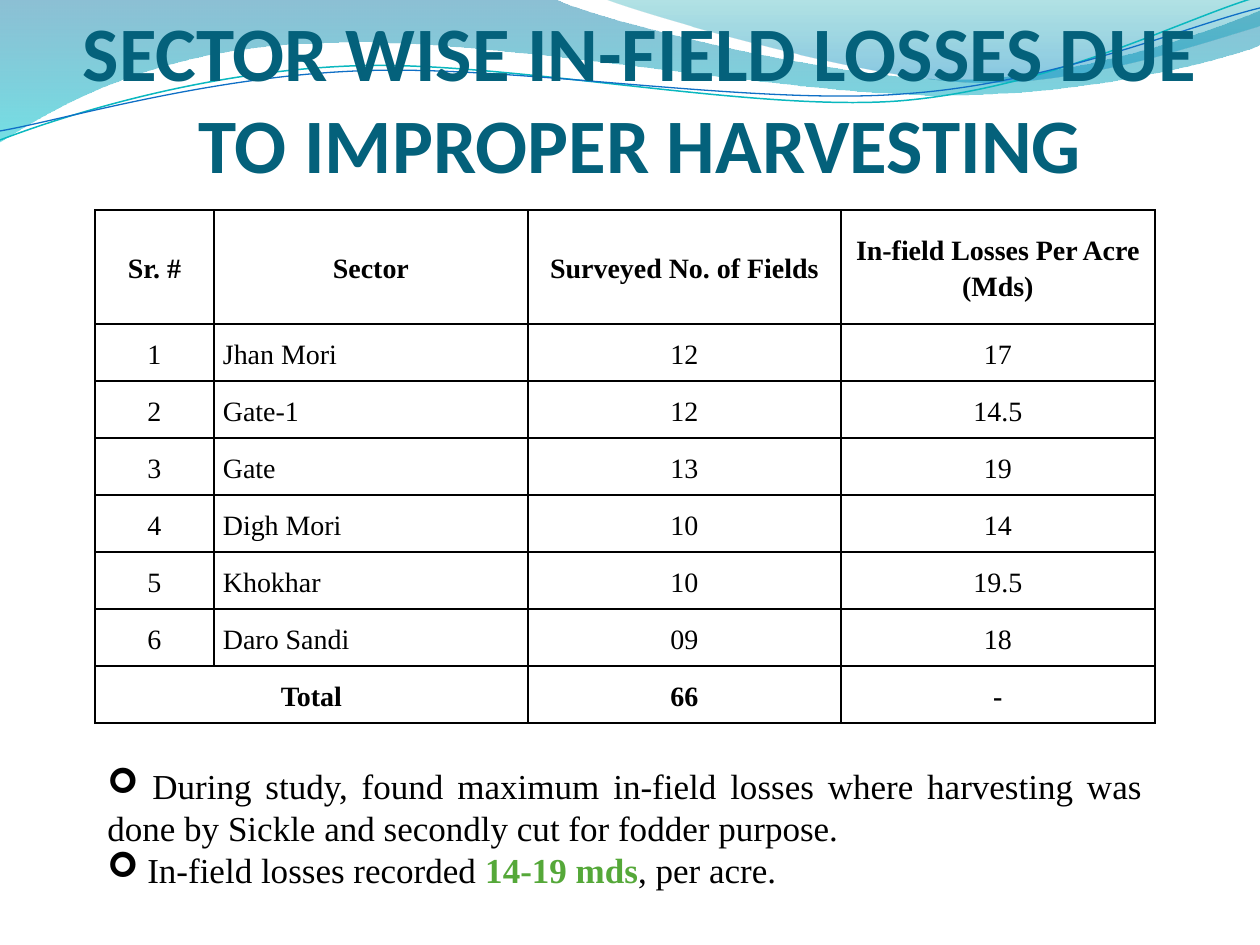
"""Build a slide with a table of in-field harvesting losses by sector."""
from dataclasses import dataclass
from typing import NamedTuple

from lxml.etree import SubElement
from pptx import Presentation
from pptx.dml.color import RGBColor
from pptx.enum.text import MSO_ANCHOR, MSO_AUTO_SIZE, PP_ALIGN
from pptx.oxml.ns import qn
from pptx.util import Pt

PX = 914400 / 126


@dataclass(frozen=True)
class Theme:
    title_font: str = "Calibri"
    body_font: str = "Times New Roman"
    bullet_font: str = "Wingdings"
    title_size: int = 44
    table_size: int = 16
    body_size: int = 20
    title: str = "04617B"
    text: str = "000000"
    highlight: str = "55A839"


class Stop(NamedTuple):
    position: float
    color: str
    alpha: int


class Wave(NamedTuple):
    start: tuple[int, int]
    segments: list[tuple[int, ...]]
    stops: tuple[Stop, Stop]


class Strand(NamedTuple):
    start: tuple[int, int]
    segments: list[tuple[int, ...]]
    color: str
    width: float


class Span(NamedTuple):
    text: str
    highlighted: bool = False


class Bullet(NamedTuple):
    spans: list[Span]
    align: PP_ALIGN


THEME = Theme()

WAVES = [
    Wave((0, 0), [(554, -1), (600, 21, 837, 79, 955, 79),
                  (1074, 79, 1207, 33, 1260, 11), (1261, 45),
                  (1239, 55, 1096, 96, 940, 95), (784, 95, 481, 35, 324, 43),
                  (163, 45, 58, 105, -1, 142), (0, 0)],
         (Stop(0, "0074A1", 45), Stop(1, "00C6CF", 55))),
    Wave((604, -1), [(641, 14, 859, 78, 969, 82),
                     (1079, 87, 1211, 40, 1260, 26), (1260, 0), (604, -1)],
         (Stop(0, "00A1A9", 30), Stop(0.8, "008BBF", 45))),
]
STRANDS = [
    Strand((0, 140), [(60, 117, 199, 72, 349, 66), (498, 59, 747, 112, 898, 101),
                      (1050, 89, 1182, 19, 1257, -3)], "0AB8BF", 0.85),
    Strand((0, 131), [(59, 121, 207, 77, 357, 71), (508, 64, 752, 106, 903, 94),
                      (1053, 84, 1186, 26, 1260, 8)], "0F6FC6", 0.75),
]

COLUMNS = [119, 314, 313, 314]
ROW_HEIGHT = 57
HEADER_HEIGHT = 114
ROWS = [
    ("Sr. #", "Sector", "Surveyed No. of Fields", "In-field Losses Per Acre (Mds)"),
    ("1", "Jhan Mori", "12", "17"),
    ("2", "Gate-1", "12", "14.5"),
    ("3", "Gate", "13", "19"),
    ("4", "Digh Mori", "10", "14"),
    ("5", "Khokhar", "10", "19.5"),
    ("6", "Daro Sandi", "09", "18"),
    ("Total", "", "66", "-"),
]
BULLETS = [
    Bullet([Span(" During study, found maximum in-field losses where harvesting was "
                 "done by Sickle and secondly cut for fodder purpose.")], PP_ALIGN.JUSTIFY),
    Bullet([Span(" In-field losses recorded "), Span("14-19 mds", True),
            Span(", per acre.")], PP_ALIGN.LEFT),
]


def px(length: int) -> int:
    """Turn px into EMU."""
    return round(length * PX)


def style_font(font, name: str, size: int, color: str, bold: bool = False) -> None:
    """Set the typeface, size, colour and weight of a font."""
    font.name, font.size, font.bold = name, Pt(size), bold
    font.color.rgb = RGBColor.from_string(color)


def add_outline(s, item: Wave | Strand, close: bool):
    """Add a shadowless freeform whose six-number segments are cubic curves."""
    points = [pair for seg in item.segments for pair in zip(seg[::2], seg[1::2])]
    builder = s.shapes.build_freeform(*item.start, scale=PX)
    builder.add_line_segments(points, close=close)
    sp = builder.convert_to_shape()
    sp.shadow.inherit = False
    lines = iter(list(sp.element.iter(qn("a:lnTo"))))
    for segment in item.segments:
        parts = [next(lines) for _ in segment[::2]]
        if len(parts) == 3:
            curve = parts[0].makeelement(qn("a:cubicBezTo"))
            parts[0].addprevious(curve)
            for part in parts:
                curve.append(part[0])
                part.getparent().remove(part)
    return sp


def add_wave(s, wave: Wave) -> None:
    """Add a translucent wave with a vertical gradient."""
    sp = add_outline(s, wave, True)
    sp.fill.gradient()
    sp.fill.gradient_angle = 270
    for target, stop in zip(sp.fill.gradient_stops, wave.stops):
        target.position = stop.position
        target.color.rgb = RGBColor.from_string(stop.color)
    for color, stop in zip(sp.element.spPr.iter(qn("a:srgbClr")), wave.stops):
        SubElement(color, qn("a:alpha"), val=str(stop.alpha * 1000))
    sp.line.fill.background()


def add_strand(s, strand: Strand) -> None:
    """Add a thin curved line."""
    sp = add_outline(s, strand, False)
    sp.fill.background()
    sp.line.color.rgb = RGBColor.from_string(strand.color)
    sp.line.width = Pt(strand.width)


def set_title(s, text: str) -> None:
    """Place the title in front of the waves and format it."""
    sp = s.shapes.title
    sp.element.getparent().append(sp.element)
    sp.left, sp.top, sp.width, sp.height = px(42), px(73), px(1197), px(116)
    tf = sp.text_frame
    tf.text = text
    tf.word_wrap, tf.auto_size = True, MSO_AUTO_SIZE.NONE
    tf.vertical_anchor = MSO_ANCHOR.BOTTOM
    tf.margin_left = tf.margin_right = tf.margin_bottom = 0
    tf.margin_top = px(6)
    p = tf.paragraphs[0]
    p.alignment = PP_ALIGN.CENTER
    style_font(p.font, THEME.title_font, THEME.title_size, THEME.title, True)


def format_cell(cell, text: str, align: PP_ALIGN, bold: bool) -> None:
    """Give a cell its borders, margins and text."""
    tc_pr = cell._tc.get_or_add_tcPr()
    for side in ("lnL", "lnR", "lnT", "lnB"):
        ln = SubElement(tc_pr, qn(f"a:{side}"), w=str(Pt(1)))
        SubElement(SubElement(ln, qn("a:solidFill")), qn("a:srgbClr"), val=THEME.text)
    cell.fill.background()
    cell.margin_left = cell.margin_right = px(9)
    cell.margin_top = cell.margin_bottom = 0
    cell.vertical_anchor = MSO_ANCHOR.MIDDLE
    p = cell.text_frame.paragraphs[0]
    p.text, p.alignment = text, align
    p.line_spacing, p.space_after = 1.15, Pt(10)
    style_font(p.font, THEME.body_font, THEME.table_size, THEME.text, bold)


def add_losses_table(s) -> None:
    """Add the table of losses with a merged total label."""
    heights = [HEADER_HEIGHT] + [ROW_HEIGHT] * (len(ROWS) - 1)
    table = s.shapes.add_table(len(ROWS), len(COLUMNS), px(95), px(210),
                               px(sum(COLUMNS)), px(sum(heights))).table
    table.first_row = table.horz_banding = False
    for column, width in zip(table.columns, COLUMNS):
        column.width = px(width)
    last = len(ROWS) - 1
    for i, (row, height) in enumerate(zip(ROWS, heights)):
        table.rows[i].height = px(height)
        bold = i in (0, last)
        for j, text in enumerate(row):
            align = PP_ALIGN.LEFT if j == 1 and not bold else PP_ALIGN.CENTER
            format_cell(table.cell(i, j), text, align, bold)
    table.cell(last, 0).merge(table.cell(last, 1))


def add_findings(s) -> None:
    """Add the bulleted findings below the table."""
    tf = s.shapes.add_textbox(px(95), px(758), px(1060), px(140)).text_frame
    tf.word_wrap, tf.auto_size = True, MSO_AUTO_SIZE.SHAPE_TO_FIT_TEXT
    for i, bullet in enumerate(BULLETS):
        p = tf.add_paragraph() if i else tf.paragraphs[0]
        p.alignment = bullet.align
        p_pr = p._p.get_or_add_pPr()
        SubElement(p_pr, qn("a:buFont"), typeface=THEME.bullet_font)
        SubElement(p_pr, qn("a:buChar"), char="➢")
        style_font(p.font, THEME.body_font, THEME.body_size, THEME.text)
        for span in bullet.spans:
            r = p.add_run()
            r.text = span.text
            if span.highlighted:
                r.font.bold = True
                r.font.color.rgb = RGBColor.from_string(THEME.highlight)


def main() -> None:
    """Build and save the presentation."""
    prs = Presentation()
    prs.slide_width, prs.slide_height = px(1260), px(945)
    s = prs.slides.add_slide(prs.slide_layouts[5])
    for wave in WAVES:
        add_wave(s, wave)
    for strand in STRANDS:
        add_strand(s, strand)
    set_title(s, "SECTOR WISE IN-FIELD LOSSES DUE TO IMPROPER HARVESTING")
    add_losses_table(s)
    add_findings(s)
    prs.save("out.pptx")


if __name__ == "__main__":
    main()
